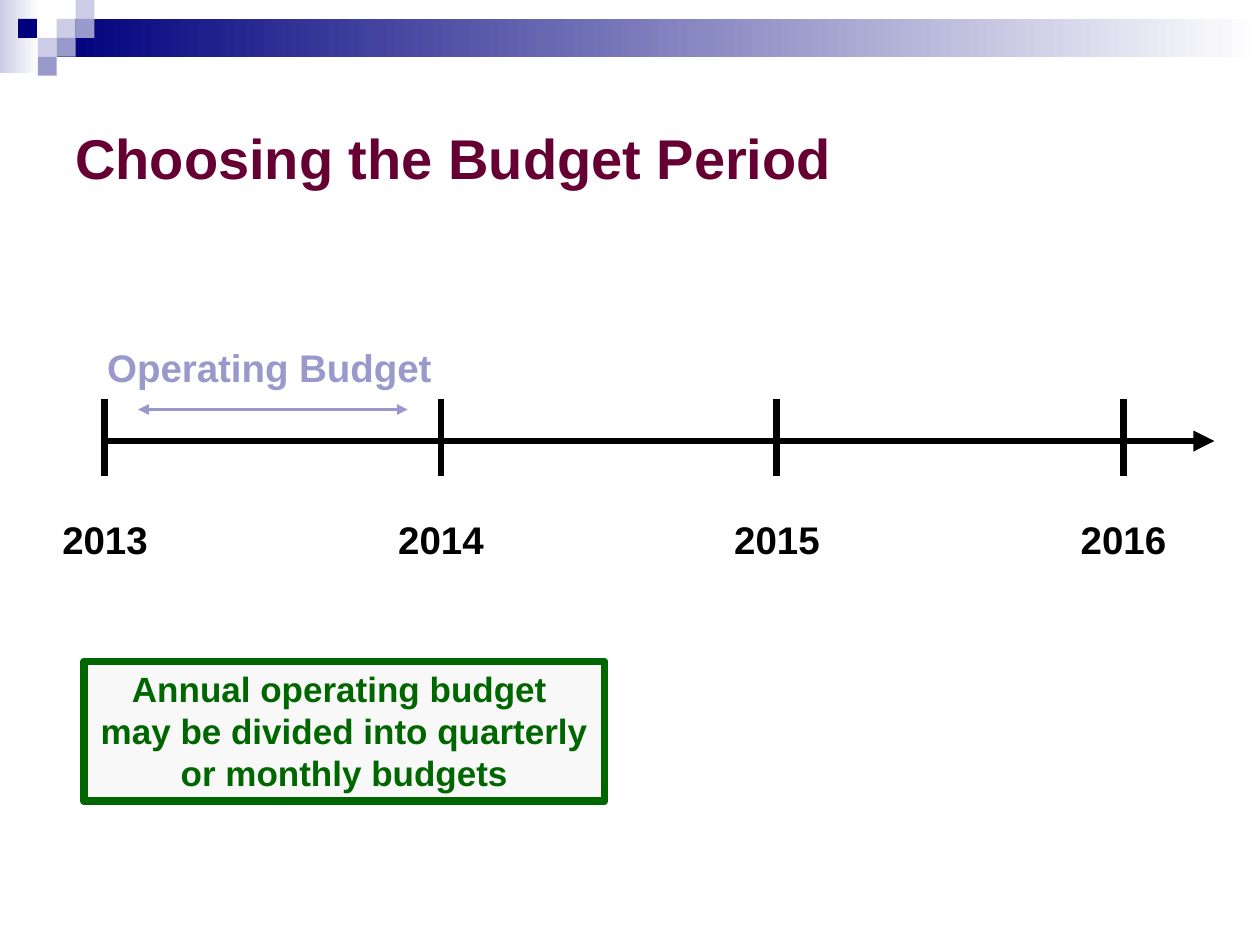
from lxml import etree
from pptx import Presentation
from pptx.dml.color import RGBColor
from pptx.enum import shapes, text
from pptx.oxml import ns
from pptx.util import Pt

NAVY = RGBColor(0x00, 0x00, 0x7D)
LILAC = RGBColor(0x99, 0x99, 0xCC)
PALE = RGBColor(0xCC, 0xCC, 0xE6)
WHITE = RGBColor(0xFF, 0xFF, 0xFF)
BLACK = RGBColor(0x00, 0x00, 0x00)
WINE = RGBColor(0x66, 0x00, 0x33)
GREEN = RGBColor(0x00, 0x66, 0x00)
GREY = RGBColor(0xF8, 0xF8, 0xF8)

TITLE = "Choosing the Budget Period"
SPAN = "Operating Budget"
YEARS = [("2013", 60), ("2014", 252), ("2015", 444), ("2016", 642)]
NOTE = ["Annual operating budget ", "may be divided into quarterly",
        "or monthly budgets"]

# Left, top, width, height and the colour that fades to white
BANDS = [(0, 0, 22.5, 42, PALE), (32.4, 10.8, 687.6, 21.6, NAVY)]
# Left and top of each mosaic square
TILE = 10.8
TILES = [(32.4, 10.8, PALE), (43.2, 0, PALE), (43.2, 10.8, LILAC),
         (21.6, 21.6, PALE), (10.3, 10.8, NAVY), (32.4, 21.6, LILAC),
         (21.6, 32.4, LILAC)]

AXIS = 252
TICK = (228, 272)


def add_rect(slide, *box):
    rect = slide.shapes.add_shape(shapes.MSO_SHAPE.RECTANGLE, *map(Pt, box))
    rect.shadow.inherit = False
    rect.line.fill.background()
    return rect


def add_band(slide, *box, color):
    fill = add_rect(slide, *box).fill
    fill.gradient()
    fill.gradient_angle = 0
    for stop, tone in zip(fill.gradient_stops, (color, WHITE)):
        stop.color.rgb = tone


def paint(shape, color):
    shape.fill.solid()
    shape.fill.fore_color.rgb = color


def write(shape, lines, size, color, align=text.PP_ALIGN.CENTER,
          anchor=text.MSO_ANCHOR.TOP, wrap=False):
    frame = shape.text_frame
    frame.word_wrap = wrap
    frame.vertical_anchor = anchor
    look = {"name": "Arial", "size": Pt(size), "bold": True}
    for i, line in enumerate(lines):
        para = frame.add_paragraph() if i else frame.paragraphs[0]
        para.alignment = align
        run = para.add_run()
        run.text = line
        for key, value in look.items():
            setattr(run.font, key, value)
        run.font.color.rgb = color


def add_text(slide, box, *args, **style):
    write(slide.shapes.add_textbox(*map(Pt, box)), *args, **style)


def add_line(slide, ends, color, width, heads=()):
    """Draw a line; heads lists headEnd (start) and tailEnd (finish)."""
    line = slide.shapes.add_connector(shapes.MSO_CONNECTOR.STRAIGHT,
                                      *map(Pt, ends))
    line.line.color.rgb = color
    line.line.width = Pt(width)
    for head in heads:
        etree.SubElement(line.line._get_or_add_ln(), ns.qn("a:" + head),
                         type="triangle")
    etree.SubElement(line._element.spPr, ns.qn("a:effectLst"))


def main():
    deck = Presentation()
    deck.slide_width, deck.slide_height = Pt(720), Pt(540)
    slide = deck.slides.add_slide(deck.slide_layouts[6])

    for *box, color in BANDS:
        add_band(slide, *box, color=color)
    for left, top, color in TILES:
        paint(add_rect(slide, left, top, TILE, TILE), color)

    add_text(slide, (36, 36, 648, 108), [TITLE], 32, WINE,
             align=text.PP_ALIGN.LEFT, anchor=text.MSO_ANCHOR.MIDDLE,
             wrap=True)

    for year, x in YEARS:
        add_line(slide, (x, TICK[0], x, TICK[1]), BLACK, 4)
        add_text(slide, (x - 32, 291.6, 64, 33.8), [year], 22, BLACK)
    add_line(slide, (62, AXIS, 694, AXIS), BLACK, 4, ["tailEnd"])

    add_text(slide, (54, 193, 200, 33), [SPAN], 22, LILAC)
    add_line(slide, (79, 234, 233, 234), LILAC, 2, ["headEnd", "tailEnd"])

    note = add_rect(slide, 48, 378, 297.5, 80)
    paint(note, GREY)
    note.line.color.rgb = GREEN
    note.line.width = Pt(4.5)
    write(note, NOTE, 20, GREEN)

    deck.save("out.pptx")


if __name__ == "__main__":
    main()
